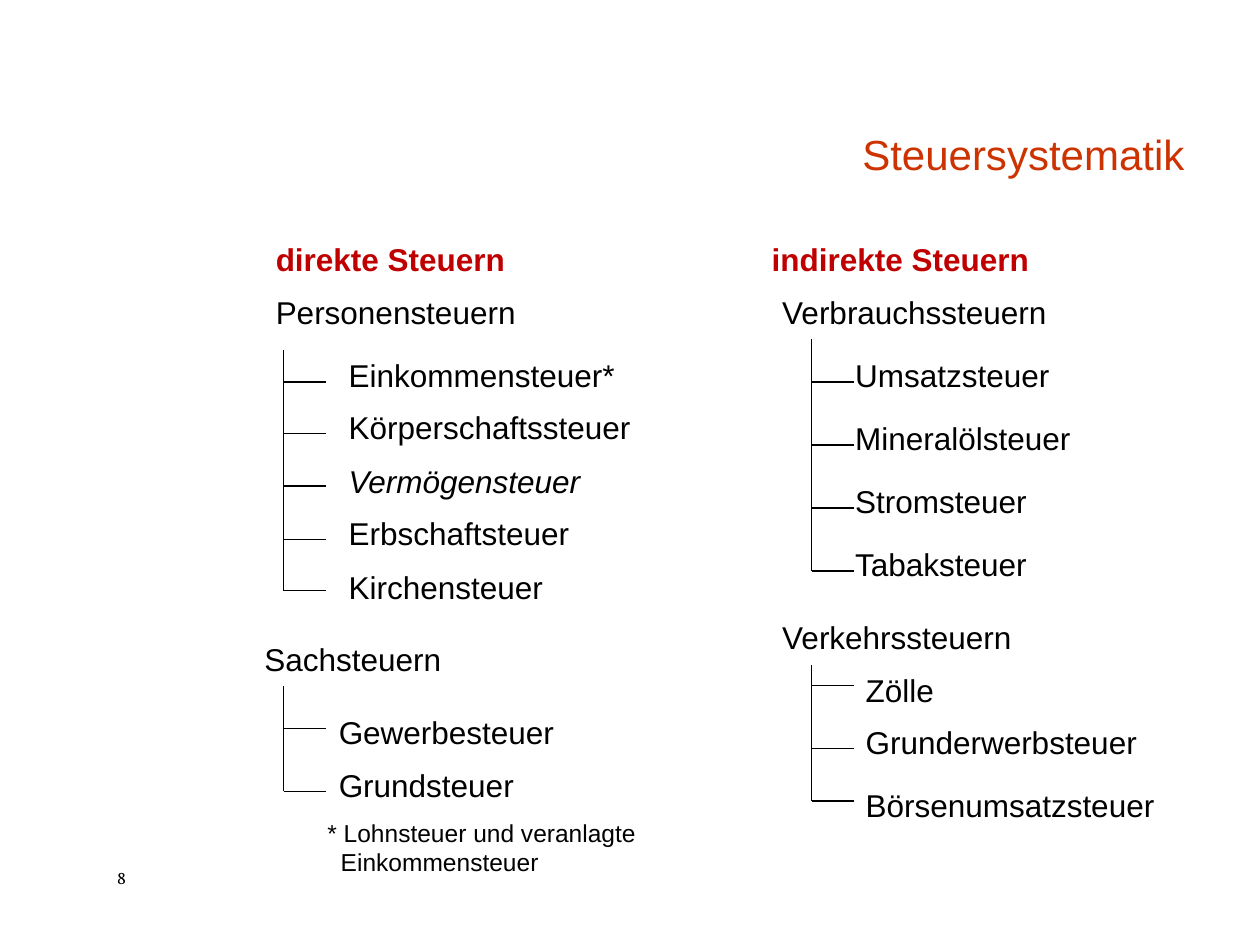
from dataclasses import dataclass

from lxml.etree import SubElement
from pptx import Presentation
from pptx.dml.color import RGBColor
from pptx.enum.shapes import MSO_CONNECTOR as Connector
from pptx.enum.text import MSO_ANCHOR as Anchor, MSO_AUTO_SIZE as AutoSize, PP_ALIGN as Align
from pptx.oxml.ns import qn
from pptx.util import Cm, Pt

BLACK = RGBColor(0x00, 0x00, 0x00)
RED = RGBColor(0xC0, 0x00, 0x00)
ORANGE = RGBColor(0xCC, 0x33, 0x00)

LINE_HEIGHT = 1.02
BRANCH_LENGTH = 0.85
LEFT_TRUNK, RIGHT_TRUNK = 5.72, 16.36


@dataclass
class TaxTree:
    """Lengths in cm; each tax is (name, top of its label, height of its branch)."""
    heading: str
    heading_box: tuple
    trunk_x: float
    trunk_top: float
    label_left: float
    label_width: float
    taxes: list


TREES = [
    TaxTree("Personensteuern", (5.31, 5.79, 7.42), LEFT_TRUNK, 7.06, 6.78, 6.6, [
        ("Einkommensteuer*", 7.06, 7.7),
        ("Körperschaftssteuer", 8.1, 8.74),
        ("Vermögensteuer", 9.19, 9.8),
        ("Erbschaftsteuer", 10.24, 10.87),
        ("Kirchensteuer", 11.33, 11.91),
    ]),
    TaxTree("Sachsteuern", (5.08, 12.78, 5.92), LEFT_TRUNK, 13.82, 6.58, 6.55, [
        ("Gewerbesteuer", 14.25, 14.68),
        ("Grundsteuer", 15.32, 15.95),
    ]),
    TaxTree("Verbrauchssteuern", (15.52, 5.79, 6.99), RIGHT_TRUNK, 6.83, 16.99, 5.8, [
        (name, 7.06 + 1.27 * row, 7.7 + 1.27 * row)
        for row, name in enumerate(
            ["Umsatzsteuer", "Mineralölsteuer", "Stromsteuer", "Tabaksteuer"])
    ]),
    TaxTree("Verkehrssteuern", (15.52, 12.34, 7.19), RIGHT_TRUNK, 13.41, 17.2, 6.55, [
        ("Zölle", 13.41, 13.82),
        ("Grunderwerbsteuer", 14.45, 15.09),
        ("Börsenumsatzsteuer", 15.72, 16.15),
    ]),
]
ITALIC_TAXES = {"Vermögensteuer"}


def write(frame, text, size=18, font="Arial", color=BLACK, bold=False, italic=False,
          align=Align.LEFT):
    para = frame.paragraphs[0]
    para.text = text
    para.alignment = align
    for span in para.runs:
        span.font.name = font
        span.font.size = Pt(size)
        span.font.bold = bold
        span.font.italic = italic
        span.font.color.rgb = color
    return para


def add_text(slide, text, left, top, width, height=LINE_HEIGHT, **text_format):
    box = slide.shapes.add_textbox(Cm(left), Cm(top), Cm(width), Cm(height))
    box.text_frame.word_wrap = True
    box.text_frame.auto_size = AutoSize.SHAPE_TO_FIT_TEXT
    return write(box.text_frame, text, **text_format)


def add_line(slide, x1, y1, x2, y2):
    line = slide.shapes.add_connector(Connector.STRAIGHT, Cm(x1), Cm(y1), Cm(x2), Cm(y2))
    line.line.color.rgb = BLACK
    line.line.width = Pt(0.75)
    SubElement(line._element.spPr, qn("a:effectLst"))


def add_title(slide, text):
    title = slide.shapes.title
    title.left, title.top, title.width, title.height = Cm(5.31), Cm(1.07), Cm(18.82), Cm(2.67)
    frame = title.text_frame
    frame.auto_size = AutoSize.NONE
    frame.vertical_anchor = Anchor.BOTTOM
    para = write(frame, text, size=24, color=ORANGE, align=Align.RIGHT)
    para.line_spacing = 0.9


def add_tree(slide, tree):
    add_text(slide, tree.heading, *tree.heading_box)
    last_branch = tree.taxes[-1][2]
    add_line(slide, tree.trunk_x, tree.trunk_top, tree.trunk_x, last_branch)
    for name, label_top, branch_y in tree.taxes:
        add_line(slide, tree.trunk_x, branch_y, tree.trunk_x + BRANCH_LENGTH, branch_y)
        add_text(slide, name, tree.label_left, label_top, tree.label_width,
                 italic=name in ITALIC_TAXES)


def add_footnote(slide):
    para = add_text(slide, "* Lohnsteuer und veranlagte\vEinkommensteuer",
                    6.35, 16.36, 8.05, 1.45, size=14)
    hanging = Cm(0.27)
    properties = para._p.get_or_add_pPr()
    properties.set("marL", str(hanging))
    properties.set("indent", str(-hanging))


def main():
    deck = Presentation()
    deck.slide_width, deck.slide_height = Cm(25.4), Cm(19.05)
    slide = deck.slides.add_slide(deck.slide_layouts[5])
    add_title(slide, "Steuersystematik")
    add_text(slide, "direkte Steuern", 5.31, 4.72, 8.46, color=RED, bold=True)
    add_text(slide, "indirekte Steuern", 15.29, 4.72, 5.72, color=RED, bold=True,
             align=Align.CENTER)
    for tree in TREES:
        add_tree(slide, tree)
    add_footnote(slide)
    add_text(slide, "8", 2.11, 17.35, 1.7, 0.69, size=10, font="Vollkorn")
    deck.save("out.pptx")


if __name__ == "__main__":
    main()
